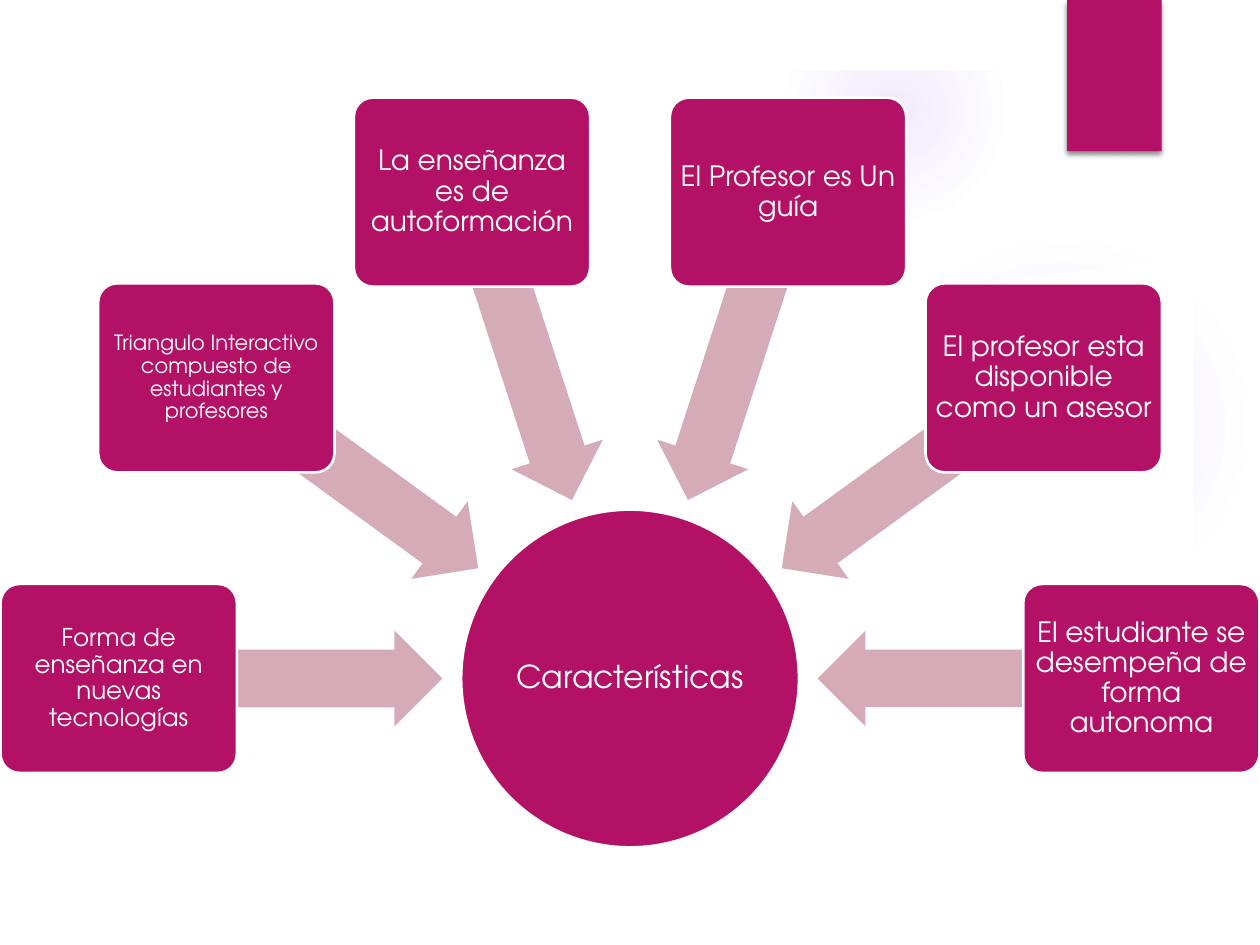
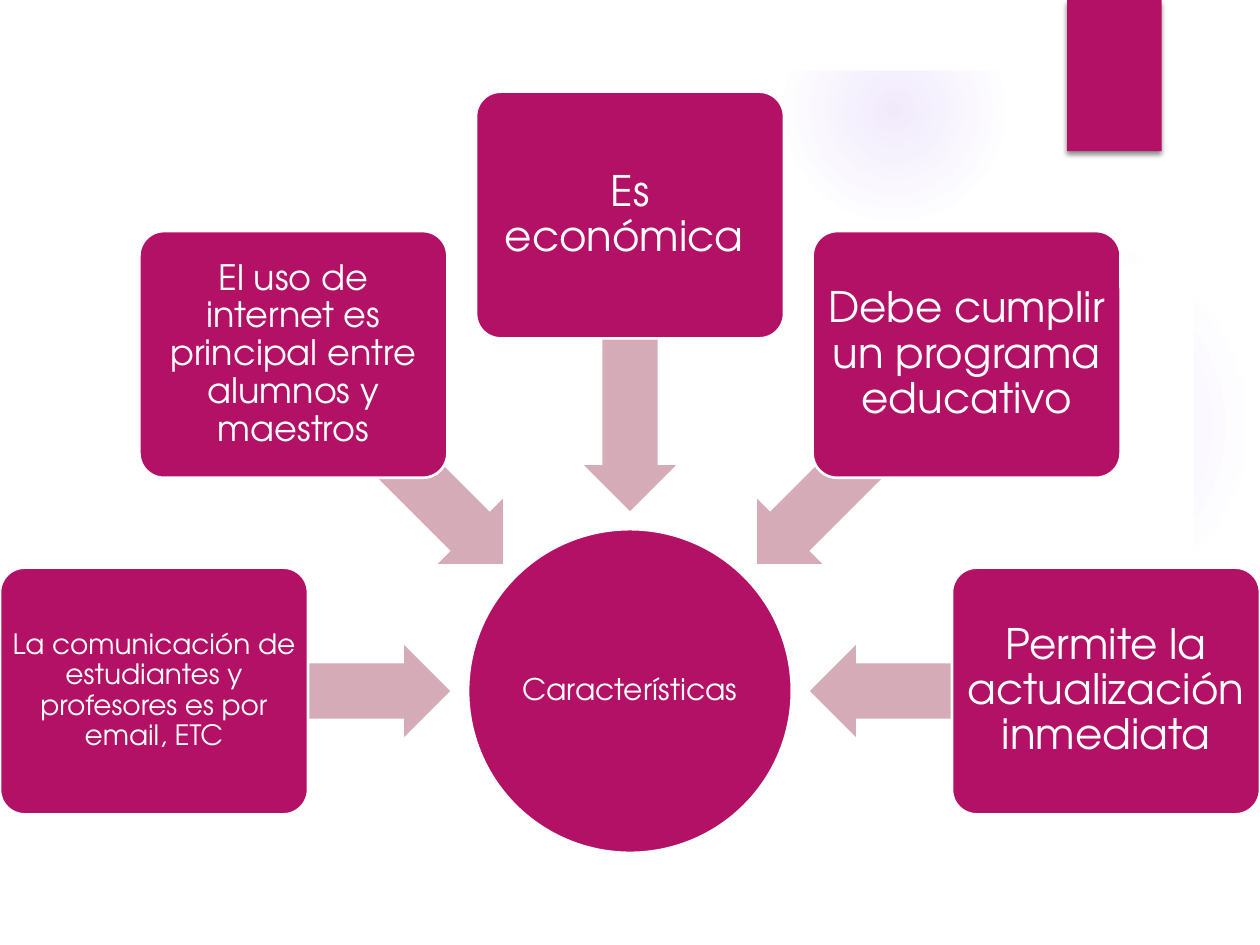
from dataclasses import dataclass
from math import cos, radians, sin

from pptx import Presentation
from pptx.dml.color import RGBColor
from pptx.enum.shapes import MSO_SHAPE as Shp
from pptx.enum.text import MSO_ANCHOR as Anchor, PP_ALIGN as Align
from pptx.oxml import parse_xml
from pptx.oxml.ns import nsdecls
from pptx.util import Pt

WIDTH, HEIGHT = 720, 540
FONT = "TeX Gyre Adventor"
PINK = RGBColor(0xB3, 0x11, 0x66)
ROSE = RGBColor(0xD6, 0xAB, 0xB8)
GLOW = RGBColor(0x9B, 0x6B, 0xF2)
WHITE = RGBColor(0xFF, 0xFF, 0xFF)

# Top edge of the white panel, from right to left
EDGE = [(682, 146), (623, 154.5), (565, 161), (507, 165), (450, 167.5),
        (395, 168.5), (341, 168.5), (291, 168), (243, 165.5), (199, 162.5),
        (160, 160), (95, 153.5), (38, 146)]


@dataclass
class Topic:
    text: str
    size: float


@dataclass
class Glow:
    left: float
    top: float
    size: float
    stops: list[tuple[int, int]]  # place and opacity, in percent


@dataclass
class Wheel:
    """Half ring of topics whose arrows point at a central hub."""
    mid: float
    hub: float
    hub_size: float
    ring: float
    box: tuple[float, float]
    arrow: tuple[float, float]
    topics: list[Topic]


GLOWS = [
    Glow(496, 131.8, 221.8, [(0, 7), (36, 6), (69, 0)]),
    Glow(447.8, 0, 126, [(0, 14), (36, 7), (73, 0)]),
]

WHEELS = [
    Wheel(387.7, 193, 18, 292.2, (135, 108), (185, 54.8), [
        Topic("Forma de enseñanza en nuevas tecnologías", 14),
        Topic("Triangulo Interactivo compuesto de estudiantes y profesores", 12),
        Topic("La enseñanza es de autoformación", 16),
        Topic("El Profesor es Un guía", 16),
        Topic("El profesor esta disponible como un asesor", 16),
        Topic("El estudiante se desempeña de forma autonoma", 16),
    ]),
    Wheel(394.9, 185, 17, 272, (176, 141), (169.2, 52.6), [
        Topic("La comunicación de estudiantes y profesores es por email, ETC", 16),
        Topic("El uso de internet es principal entre alumnos y maestros", 20),
        Topic("Es económica ", 24),
        Topic("Debe cumplir un programa educativo", 24),
        Topic("Permite la actualización inmediata", 24),
    ]),
]


def paint(shape, fill: RGBColor, line: RGBColor | None = None) -> None:
    shape.shadow.inherit = False
    shape.fill.solid()
    shape.fill.fore_color.rgb = fill
    if line is None:
        shape.line.fill.background()
    else:
        shape.line.color.rgb = line
        shape.line.width = Pt(1.5)


def put(slide, kind, left: float, top: float, wide: float, high: float,
        fill: RGBColor, line: RGBColor | None = None):
    shape = slide.shapes.add_shape(kind, Pt(left), Pt(top), Pt(wide), Pt(high))
    paint(shape, fill, line)
    return shape


def center(slide, kind, x: float, y: float, size: tuple[float, float],
           fill: RGBColor, line: RGBColor | None = None):
    wide, high = size
    return put(slide, kind, x - wide / 2, y - high / 2, wide, high, fill, line)


def write(shape, text: str, *, size: float, inset: float,
          color: RGBColor = WHITE) -> None:
    frame = shape.text_frame
    frame.word_wrap = True
    frame.vertical_anchor = Anchor.MIDDLE
    frame.margin_left = frame.margin_right = Pt(inset)
    frame.margin_top = frame.margin_bottom = Pt(inset)
    para = frame.paragraphs[0]
    para.alignment = Align.CENTER
    para.line_spacing = 0.9
    run = para.add_run()
    run.text = text
    run.font.name = FONT
    run.font.size = Pt(size)
    run.font.color.rgb = color


def shine(slide, glow: Glow) -> None:
    disc = put(slide, Shp.OVAL, glow.left, glow.top, glow.size, glow.size, GLOW)
    stops = "".join(
        f'<a:gs pos="{pos * 1000}"><a:srgbClr val="{GLOW}">'
        f'<a:alpha val="{alpha * 1000}"/></a:srgbClr></a:gs>'
        for pos, alpha in glow.stops)
    grad = parse_xml(
        f'<a:gradFill {nsdecls("a")}><a:gsLst>{stops}</a:gsLst><a:path path="circle">'
        '<a:fillToRect l="50000" t="50000" r="50000" b="50000"/></a:path></a:gradFill>')
    props = disc.element.spPr
    props.replace(props.find("{*}solidFill"), grad)


def backdrop(slide) -> None:
    for glow in GLOWS:
        shine(slide, glow)
    # White panel and top band trim the glows
    pen = slide.shapes.build_freeform(Pt(38), Pt(503))
    pen.add_line_segments([(Pt(x), Pt(y)) for x, y in [(682, 503), *EDGE]])
    paint(pen.convert_to_shape(), WHITE)
    put(slide, Shp.RECTANGLE, 0, 0, WIDTH, 40.3, WHITE)
    # Corner tab with a soft shadow
    tab = put(slide, Shp.RECTANGLE, 609.8, 0, 54, 86.4, PINK)
    tab.element.spPr.find("{*}effectLst").append(parse_xml(
        f'<a:outerShdw {nsdecls("a")} blurRad="{Pt(3)}" dist="{Pt(2)}" dir="5400000" '
        'rotWithShape="0"><a:srgbClr val="000000"><a:alpha val="45000"/>'
        '</a:srgbClr></a:outerShdw>'))


def draw(slide, wheel: Wheel) -> None:
    mid_x = WIDTH / 2
    hub = center(slide, Shp.OVAL, mid_x, wheel.mid, (wheel.hub, wheel.hub), PINK, WHITE)
    write(hub, "Características", size=wheel.hub_size, inset=0.9)
    step = 180 / (len(wheel.topics) - 1)
    reach = wheel.ring - wheel.arrow[0] / 2
    for i, topic in enumerate(wheel.topics):
        turn = 180 + i * step
        dx, dy = cos(radians(turn)), sin(radians(turn))
        arrow = center(slide, Shp.LEFT_ARROW, mid_x + reach * dx,
                       wheel.mid + reach * dy, wheel.arrow, ROSE)
        arrow.adjustments[0], arrow.adjustments[1] = 0.6, 0.5
        arrow.rotation = turn % 360
        box = center(slide, Shp.ROUNDED_RECTANGLE, mid_x + wheel.ring * dx,
                     wheel.mid + wheel.ring * dy, wheel.box, PINK, WHITE)
        box.adjustments[0] = 0.1
        write(box, topic.text, size=topic.size, inset=0.15 * topic.size)


def main() -> None:
    deck = Presentation()
    deck.slide_width, deck.slide_height = Pt(WIDTH), Pt(HEIGHT)
    for wheel in WHEELS:
        slide = deck.slides.add_slide(deck.slide_layouts[6])
        backdrop(slide)
        draw(slide, wheel)
    deck.save("out.pptx")


if __name__ == "__main__":
    main()
